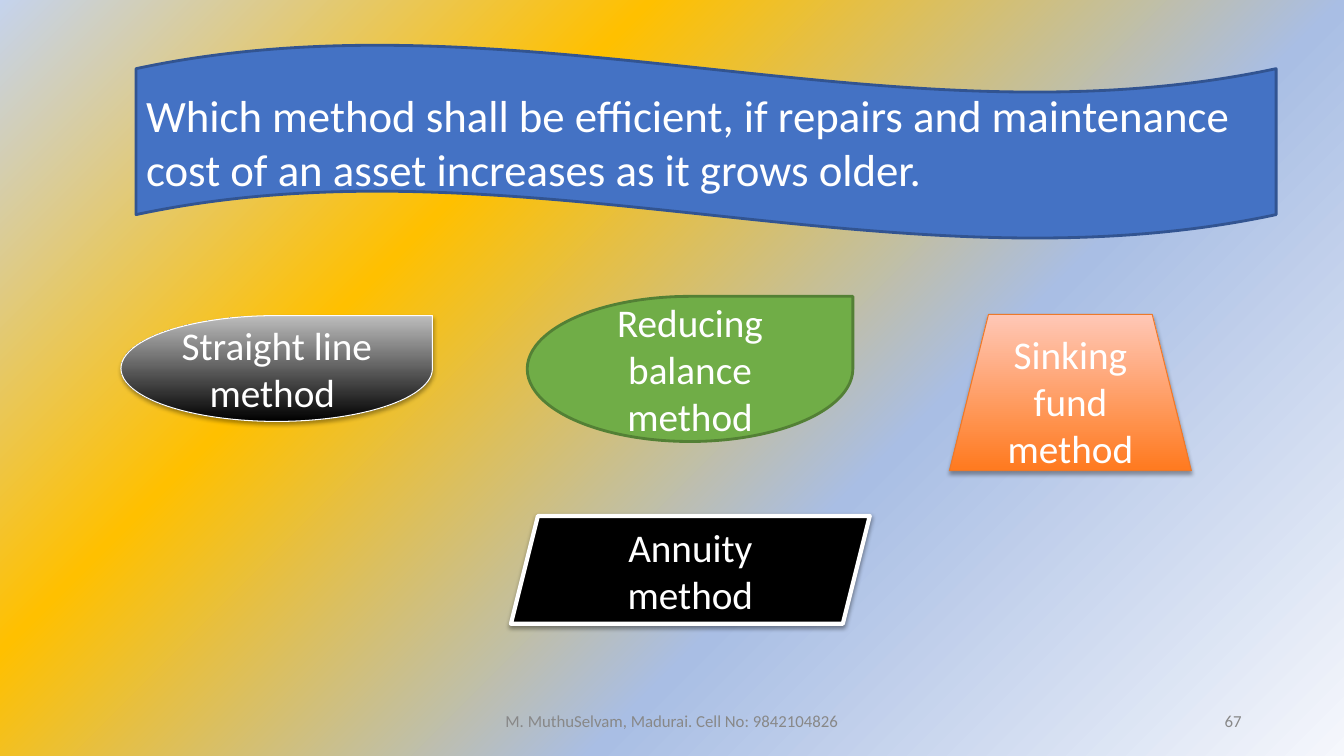
"""Build a quiz slide on choosing a depreciation method."""
from lxml import etree
from pptx import Presentation
from pptx import util as u
from pptx.dml import color
from pptx.enum import shapes, text
from pptx.oxml import ns

COLOURS = {
    "white": "FFFFFF", "black": "000000", "grey": "BDBDBD", "footer": "888888",
    "blue": "4472C4", "navy": "325491", "green": "70AD47", "forest": "538035",
    "orange": "FF7A1F", "peach": "FFC7B6", "rust": "EC792B",
    "mist": "F5F7FC", "sky": "A9BEE4", "gold": "FFC000", "haze": "C5D3ED",
}
BACKDROP = [(0, "mist"), (36, "sky"), (69, "gold"), (100, "haze")]
FORM = shapes.MSO_SHAPE
ALIGN = text.PP_ALIGN

QUESTION = ("Which method shall be efficient, if repairs and maintenance "
            "cost of an asset increases as it grows older.")
# wording, form, (left, top, width, height), fill, line, size, align, (opacity, distance)
CARDS = [
    (QUESTION, FORM.WAVE, (97.2, 31.7, 814.3, 139),
     ["blue"], ("navy", 2), 32, ALIGN.LEFT, None),
    ("Straight line method ", FORM.TEAR, (86.4, 225.4, 222.5, 75.6),
     ["black", "grey"], ("white", 0.75), 28, ALIGN.CENTER, (35, 1.8)),
    ("Sinking fund method", FORM.TRAPEZOID, (678.2, 224.6, 172.8, 111.6),
     ["orange", "peach"], ("rust", 0.75), 28, ALIGN.CENTER, (35, 1.8)),
    ("Annuity method", FORM.PARALLELOGRAM, (365, 368.6, 256.3, 77),
     ["black"], ("white", 3), 28, ALIGN.CENTER, (38, 1.6)),
    ("Reducing balance method", FORM.TEAR, (376.6, 211.7, 232.6, 103.7),
     ["green"], ("forest", 2), 28, ALIGN.CENTER, None),
]
FOOTERS = [
    ("M. MuthuSelvam, Madurai. Cell No: 9842104826", (318, 500.4, 324, 28.8), ALIGN.CENTER),
    ("67", (678, 500.4, 216, 28.8), ALIGN.RIGHT),
]


def rgb(name):
    """Return the named colour."""
    return color.RGBColor.from_string(COLOURS[name])


def add_xml(parent, tag, **attributes):
    """Append a DrawingML element and return it."""
    return etree.SubElement(parent, ns.qn(tag), {k: str(v) for k, v in attributes.items()})


def paint_backdrop(page):
    """Fill the page with a gradient spreading from its lower right corner."""
    page.background.fill.solid()
    solid = next(page.element.iter(ns.qn("a:solidFill")))
    gradient = etree.Element(ns.qn("a:gradFill"), rotWithShape="1")
    solid.getparent().replace(solid, gradient)
    stops = add_xml(gradient, "a:gsLst")
    for percent, name in BACKDROP:
        stop = add_xml(stops, "a:gs", pos=percent * 1000)
        add_xml(stop, "a:srgbClr", val=COLOURS[name])
    circle = add_xml(gradient, "a:path", path="circle")
    add_xml(circle, "a:fillToRect", l=100000, t=100000)
    add_xml(gradient, "a:tileRect", r=-100000, b=-100000)


def paint(fill, names):
    """Apply one colour, or a gradient rising from the first to the second."""
    if len(names) == 1:
        fill.solid()
        fill.fore_color.rgb = rgb(names[0])
        return
    fill.gradient()
    fill.gradient_angle = 90
    for stop, name in zip(fill.gradient_stops, names):
        stop.color.rgb = rgb(name)


def cast_shadow(box, opacity, distance):
    """Drop a soft shadow straight down."""
    effects = box.element.spPr.find(ns.qn("a:effectLst"))
    shadow = add_xml(effects, "a:outerShdw", blurRad=u.Pt(3.1), dist=u.Pt(distance),
                     dir=5400000, rotWithShape=0)
    tint = add_xml(shadow, "a:srgbClr", val=COLOURS["black"])
    add_xml(tint, "a:alpha", val=opacity * 1000)


def write(box, words, size, name, align):
    """Set the wording of a box."""
    frame = box.text_frame
    frame.word_wrap = True
    frame.vertical_anchor = text.MSO_ANCHOR.MIDDLE
    para = frame.paragraphs[0]
    para.alignment = align
    span = para.add_run()
    span.text = words
    span.font.name = "Calibri"
    span.font.size = u.Pt(size)
    span.font.color.rgb = rgb(name)


def main():
    """Create and save the deck."""
    deck = Presentation()
    deck.slide_width, deck.slide_height = u.Pt(960), u.Pt(540)
    page = deck.slides.add_slide(deck.slide_layouts.get_by_name("Blank"))
    paint_backdrop(page)
    for words, form, place, fill, (edge, weight), size, align, shadow in CARDS:
        box = page.shapes.add_shape(form, *map(u.Pt, place))
        paint(box.fill, fill)
        box.line.color.rgb = rgb(edge)
        box.line.width = u.Pt(weight)
        box.shadow.inherit = False
        if shadow:
            cast_shadow(box, *shadow)
        write(box, words, size, "white", align)
    for words, place, align in FOOTERS:
        box = page.shapes.add_textbox(*map(u.Pt, place))
        write(box, words, 12, "footer", align)
    deck.save("out.pptx")


if __name__ == "__main__":
    main()
